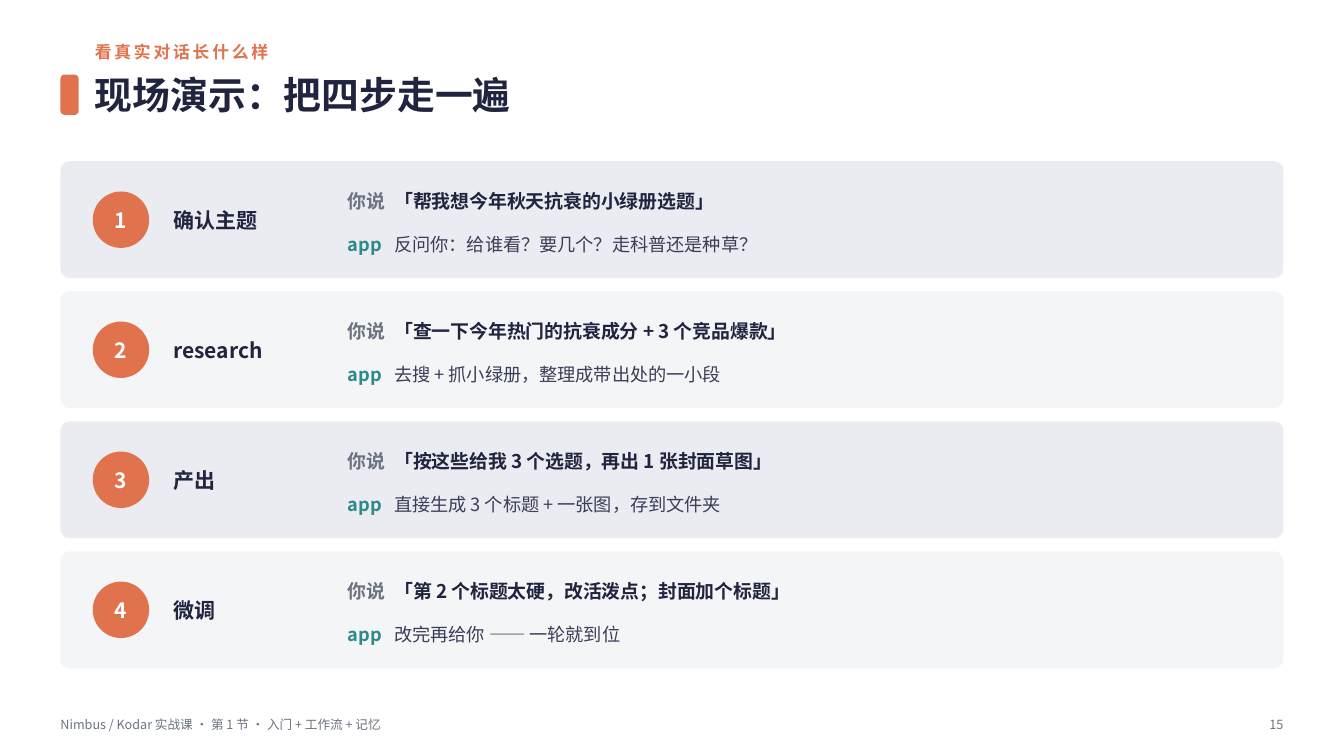
from lxml.etree import SubElement
from pptx import Presentation
from pptx.dml.color import RGBColor
from pptx.enum.shapes import MSO_SHAPE as SHAPE
from pptx.enum.text import MSO_ANCHOR as ANCHOR, MSO_AUTO_SIZE as FIT, PP_ALIGN as ALIGN
from pptx.oxml.ns import qn
from pptx.util import Inches, Pt

FONT = "Noto Sans CJK SC"
COLORS = {
    "accent": "E0734D", "ink": "20243F", "body": "3A3E57", "muted": "6B7280",
    "app": "2E8A8A", "white": "FFFFFF", "band": "EAECF1", "band_light": "F4F5F7",
}
SLIDE_W, SLIDE_H = 13.33, 7.5
MARGIN = 0.6
CONTENT_W = SLIDE_W - 2 * MARGIN
ROW_TOP, ROW_H, ROW_GAP = 1.6, 1.16, 0.13
SPEECH_TAB = 0.46

STEPS = [
    ("确认主题", "「帮我想今年秋天抗衰的小绿册选题」",
     "反问你：给谁看？要几个？走科普还是种草？"),
    ("research", "「查一下今年热门的抗衰成分 + 3 个竞品爆款」",
     "去搜 + 抓小绿册，整理成带出处的一小段"),
    ("产出", "「按这些给我 3 个选题，再出 1 张封面草图」",
     "直接生成 3 个标题 + 一张图，存到文件夹"),
    ("微调", "「第 2 个标题太硬，改活泼点；封面加个标题」",
     "改完再给你 —— 一轮就到位"),
]


def rgb(name):
    return RGBColor.from_string(COLORS[name])


def style(p, size, color, bold=False, align=ALIGN.LEFT):
    p.alignment = align
    font = p.font
    font.name, font.size, font.bold = FONT, Pt(size), bold
    font.color.rgb = rgb(color)
    SubElement(font._rPr, qn("a:ea")).set("typeface", FONT)


def frame(sp):
    tf = sp.text_frame
    tf.margin_left = tf.margin_right = tf.margin_top = tf.margin_bottom = 0
    tf.vertical_anchor = ANCHOR.MIDDLE
    tf.word_wrap = True
    tf.auto_size = FIT.NONE
    return tf


def add_box(slide, x, y, w, h):
    sp = slide.shapes.add_textbox(Inches(x), Inches(y), Inches(w), Inches(h))
    return frame(sp).paragraphs[0]


def add_text(slide, x, y, w, h, text, size, color, bold=False, align=ALIGN.LEFT):
    p = add_box(slide, x, y, w, h)
    p.add_run().text = text
    style(p, size, color, bold, align)
    return p


def add_panel(slide, kind, x, y, w, h, color, radius=None):
    sp = slide.shapes.add_shape(kind, Inches(x), Inches(y), Inches(w), Inches(h))
    sp.shadow.inherit = False
    sp.fill.solid()
    sp.fill.fore_color.rgb = rgb(color)
    sp.line.fill.background()
    if radius is not None:
        sp.adjustments[0] = radius / min(w, h)
    return sp


def add_speech(slide, x, y, w, h, speaker, words, size, speaker_color, color, bold):
    p = add_box(slide, x, y, w, h)
    # The tab stop lines up the words of both speakers
    tabs = SubElement(p._p.get_or_add_pPr(), qn("a:tabLst"))
    SubElement(tabs, qn("a:tab"), pos=str(Inches(SPEECH_TAB)), algn="l")
    style(p, size, color, bold)
    r = p.add_run()
    r.text = speaker + "\t"
    r.font.bold = True
    r.font.color.rgb = rgb(speaker_color)
    p.add_run().text = words


def add_header(slide, x, y, w):
    text_x, text_w = x + 0.34, w - 0.34
    # Kicker with wide letter spacing
    p = add_text(slide, text_x, y, text_w, 0.3, "看真实对话长什么样", 12, "accent", True)
    p.runs[0].font._rPr.set("spc", "200")
    # Accent bar and title
    add_panel(slide, SHAPE.ROUNDED_RECTANGLE, x, y + 0.38, 0.18, 0.4, "accent", 0.04)
    title = slide.shapes.title
    title.left, title.top = Inches(text_x), Inches(y + 0.28)
    title.width, title.height = Inches(text_w), Inches(0.6)
    p = frame(title).paragraphs[0]
    p.add_run().text = "现场演示：把四步走一遍"
    style(p, 27, "ink", True)


def add_step(slide, x, y, w, h, number, step):
    name, prompt, reply = step
    band = "band" if number % 2 else "band_light"
    add_panel(slide, SHAPE.ROUNDED_RECTANGLE, x, y, w, h, band, 0.09)
    # Number badge
    d = 0.56
    badge = add_panel(slide, SHAPE.OVAL, x + 0.32, y + (h - d) / 2, d, d, "accent")
    p = frame(badge).paragraphs[0]
    p.add_run().text = str(number)
    style(p, 15, "white", True, ALIGN.CENTER)
    # Step name and the two lines of dialogue
    add_text(slide, x + 1.12, y, 1.6, h, name, 15, "ink", True)
    speech_x, speech_w = x + 2.85, w - 3.15
    add_speech(slide, speech_x, y + 0.17, speech_w, 0.45,
               "你说", prompt, 13.5, "muted", "ink", True)
    add_speech(slide, speech_x, y + 0.6, speech_w, 0.45,
               "app", reply, 13, "app", "body", False)


def add_footer(slide, x, y, w):
    add_text(slide, x, y, 9, 0.3, "Nimbus / Kodar 实战课 · 第 1 节 · 入门 + 工作流 + 记忆",
             9, "muted")
    add_text(slide, x + w - 0.7, y, 0.7, 0.3, "15", 9, "muted", align=ALIGN.RIGHT)


def main():
    prs = Presentation()
    prs.slide_width, prs.slide_height = Inches(SLIDE_W), Inches(SLIDE_H)
    slide = prs.slides.add_slide(prs.slide_layouts[5])
    slide.background.fill.solid()
    slide.background.fill.fore_color.rgb = rgb("white")
    add_header(slide, MARGIN, 0.36, CONTENT_W)
    for i, step in enumerate(STEPS):
        y = ROW_TOP + i * (ROW_H + ROW_GAP)
        add_step(slide, MARGIN, y, CONTENT_W, ROW_H, i + 1, step)
    add_footer(slide, MARGIN, SLIDE_H - 0.46, CONTENT_W)
    prs.save("out.pptx")


if __name__ == "__main__":
    main()
